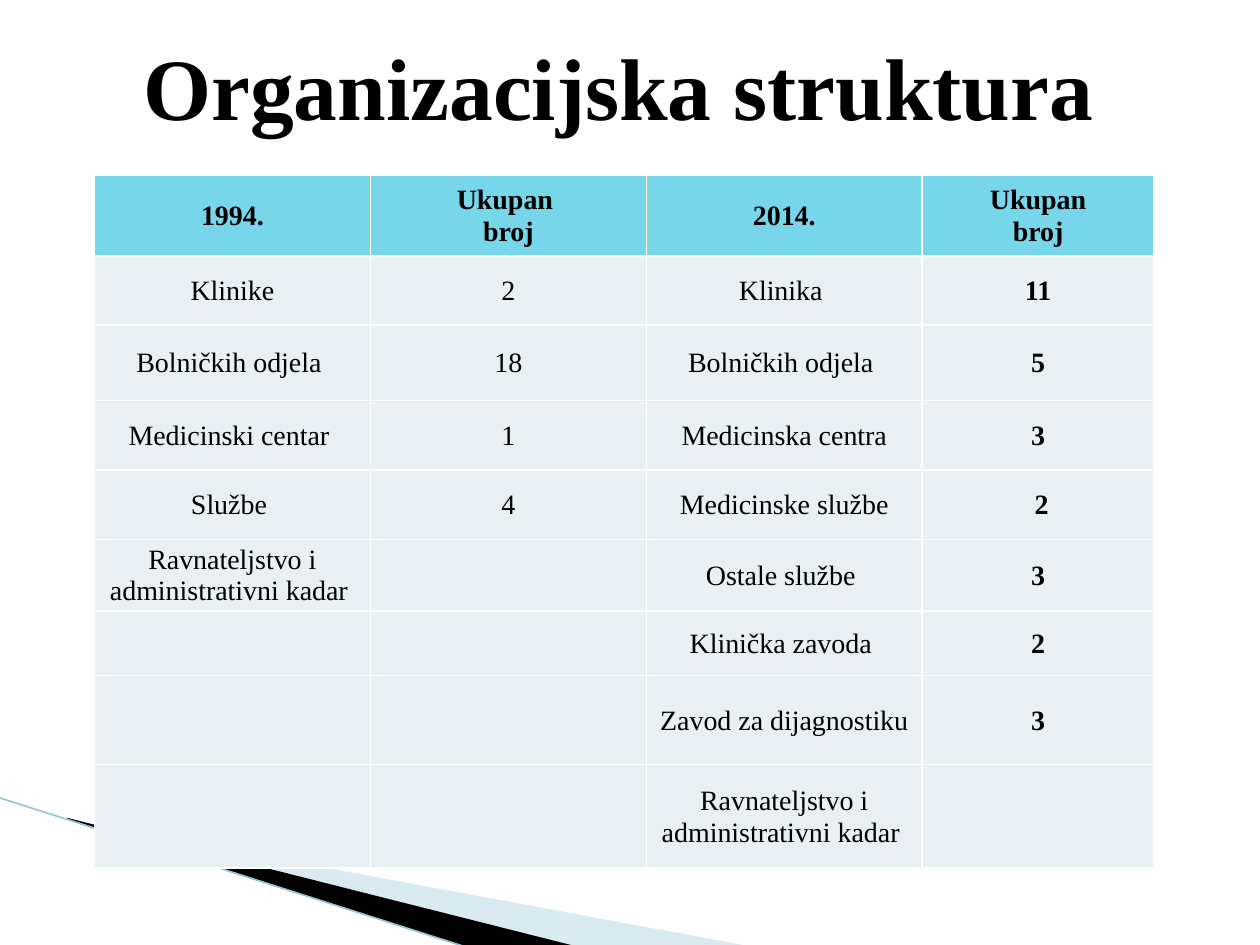
from lxml import etree
from pptx import Presentation
from pptx.dml.color import RGBColor
from pptx.enum import shapes, text
from pptx.oxml import ns
from pptx.util import Inches, Pt

BLACK = RGBColor(0x00, 0x00, 0x00)
WHITE = RGBColor(0xFF, 0xFF, 0xFF)
HEADER_BLUE = RGBColor(0x78, 0xD6, 0xEA)
CELL_GREY = RGBColor(0xE8, 0xF0, 0xF4)
WEDGE_BLUE = RGBColor(0xA0, 0xCB, 0xDC)
EDGE_BLUE = RGBColor(0x97, 0xC5, 0xD8)

COLUMN_WIDTHS = [2.19, 2.19, 2.19, 1.84]
ROW_HEIGHTS = [0.64, 0.55, 0.6, 0.55, 0.55, 0.57, 0.51, 0.71, 0.82]
STAFF = "Ravnateljstvo i administrativni kadar "
UNITS = [
    ["1994.", "Ukupan \nbroj", "2014.", "Ukupan\nbroj"],
    ["Klinike", "2", "Klinika ", "11"],
    ["Bolničkih odjela ", "18", "Bolničkih odjela ", "5"],
    ["Medicinski centar ", "1", "Medicinska centra", "3"],
    ["Službe ", "4", "Medicinske službe", " 2"],
    [STAFF, "", "Ostale službe ", "3"],
    ["", "", "Klinička zavoda ", "2"],
    ["", "", "Zavod za dijagnostiku", "3"],
    ["", "", STAFF, ""],
]


class StructureSlide:
    font = "Times New Roman"

    def __init__(self, slide):
        self.slide = slide

    def add_lines(self, frame, content, size, bold):
        for index, line in enumerate(content.split("\n")):
            paragraph = frame.paragraphs[0] if index == 0 else frame.add_paragraph()
            paragraph.alignment = text.PP_ALIGN.CENTER
            run = paragraph.add_run()
            run.text = line
            run.font.name = self.font
            run.font.size = Pt(size)
            run.font.bold = bold
            run.font.color.rgb = BLACK

    def title(self, content, left, top, width, height):
        heading = self.slide.shapes.add_textbox(
            Inches(left), Inches(top), Inches(width), Inches(height))
        frame = heading.text_frame
        frame.word_wrap = True
        frame.vertical_anchor = text.MSO_ANCHOR.MIDDLE
        self.add_lines(frame, content, 50, True)

    def wedge(self, points, color, opacity=100):
        corners = [(Inches(x), Inches(y)) for x, y in points]
        builder = self.slide.shapes.build_freeform(*corners[0], scale=1.0)
        builder.add_line_segments(corners[1:], close=True)
        wedge = builder.convert_to_shape()
        wedge.shadow.inherit = False
        wedge.fill.solid()
        wedge.fill.fore_color.rgb = color
        wedge.line.fill.background()
        if opacity < 100:
            tint = next(wedge.element.spPr.iter(ns.qn("a:srgbClr")))
            etree.SubElement(tint, ns.qn("a:alpha"), val=str(opacity * 1000))

    def edge(self, start, end, color, width):
        edge = self.slide.shapes.add_connector(
            shapes.MSO_CONNECTOR.STRAIGHT, *map(Inches, start + end))
        edge.line.color.rgb = color
        edge.line.width = Pt(width)
        etree.SubElement(edge.element.spPr, ns.qn("a:effectLst"))

    def border(self, cell, color, width):
        properties = cell._tc.get_or_add_tcPr()
        for position, side in enumerate(("lnL", "lnR", "lnT", "lnB")):
            line = etree.Element(ns.qn(f"a:{side}"), w=str(Pt(width)))
            fill = etree.SubElement(line, ns.qn("a:solidFill"))
            etree.SubElement(fill, ns.qn("a:srgbClr"), val=str(color))
            properties.insert(position, line)

    def table(self, rows, left, top, widths, heights):
        table = self.slide.shapes.add_table(
            len(rows), len(widths), Inches(left), Inches(top),
            Inches(sum(widths)), Inches(sum(heights))).table
        for column, width in zip(table.columns, widths):
            column.width = Inches(width)
        for row, height in zip(table.rows, heights):
            row.height = Inches(height)
        for r, row in enumerate(rows):
            for c, content in enumerate(row):
                cell = table.cell(r, c)
                cell.fill.solid()
                cell.fill.fore_color.rgb = HEADER_BLUE if r == 0 else CELL_GREY
                self.border(cell, WHITE, 1)
                if content:
                    cell.margin_left = cell.margin_right = cell.margin_top = Inches(0.01)
                    cell.margin_bottom = 0
                    cell.vertical_anchor = text.MSO_ANCHOR.MIDDLE
                    self.add_lines(cell.text_frame, content, 16, r == 0 or c == 3)


def main():
    deck = Presentation()
    deck.slide_width, deck.slide_height = Inches(10), Inches(7.5)
    page = StructureSlide(deck.slides.add_slide(deck.slide_layouts[6]))
    page.wedge([(0.55, 6.51), (5.95, 7.51), (4.56, 7.51), (0.55, 6.5)], WEDGE_BLUE, 40)
    page.wedge([(0.53, 6.49), (4.57, 7.51), (3.72, 7.52), (0.54, 6.5)], BLACK)
    page.edge((-0.01, 6.33), (3.71, 7.52), EDGE_BLUE, 0.95)
    page.table(UNITS, 0.75, 1.39, COLUMN_WIDTHS, ROW_HEIGHTS)
    page.title("Organizacijska struktura ", 0.5, 0.05, 9, 1.25)
    deck.save("out.pptx")


if __name__ == "__main__":
    main()
